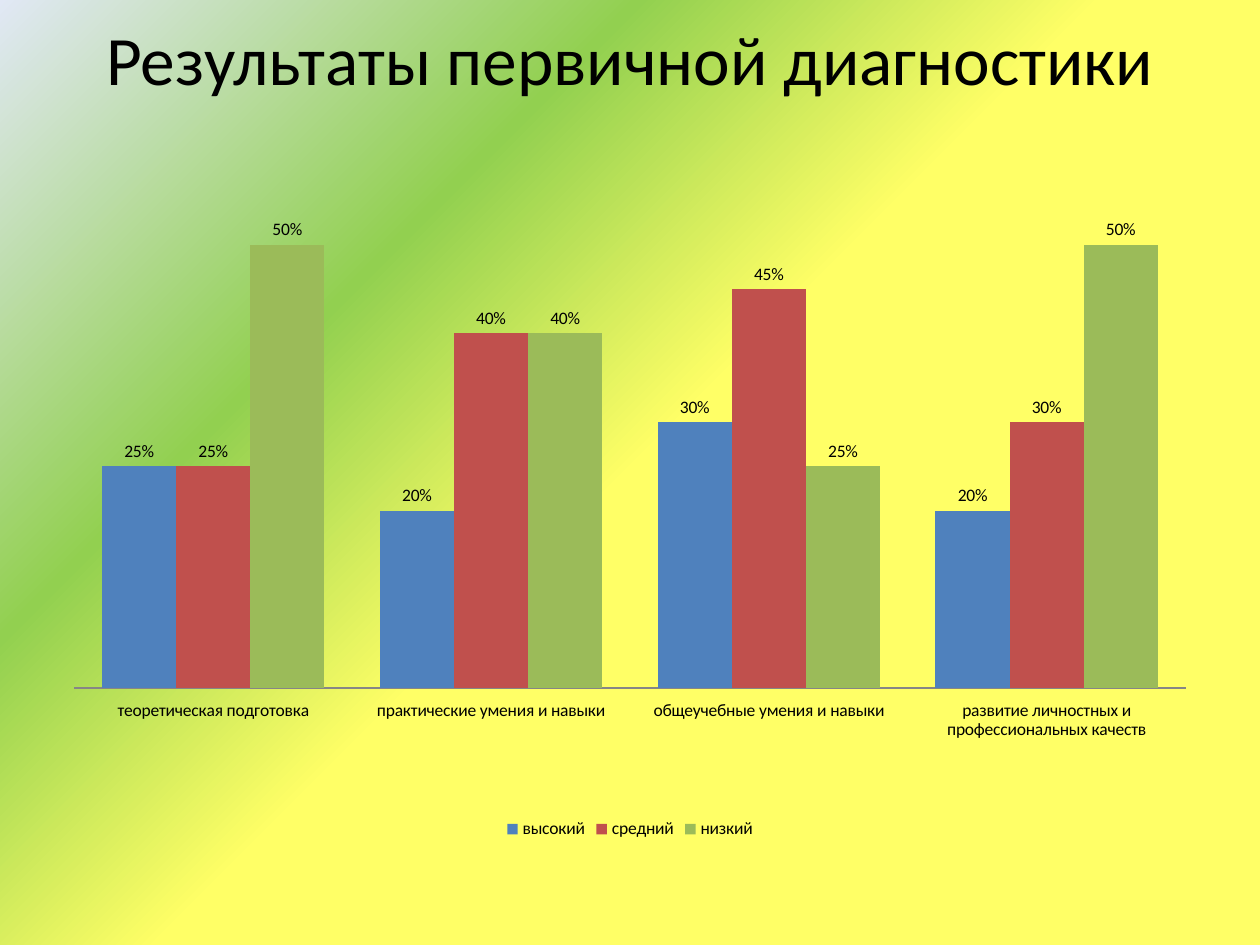
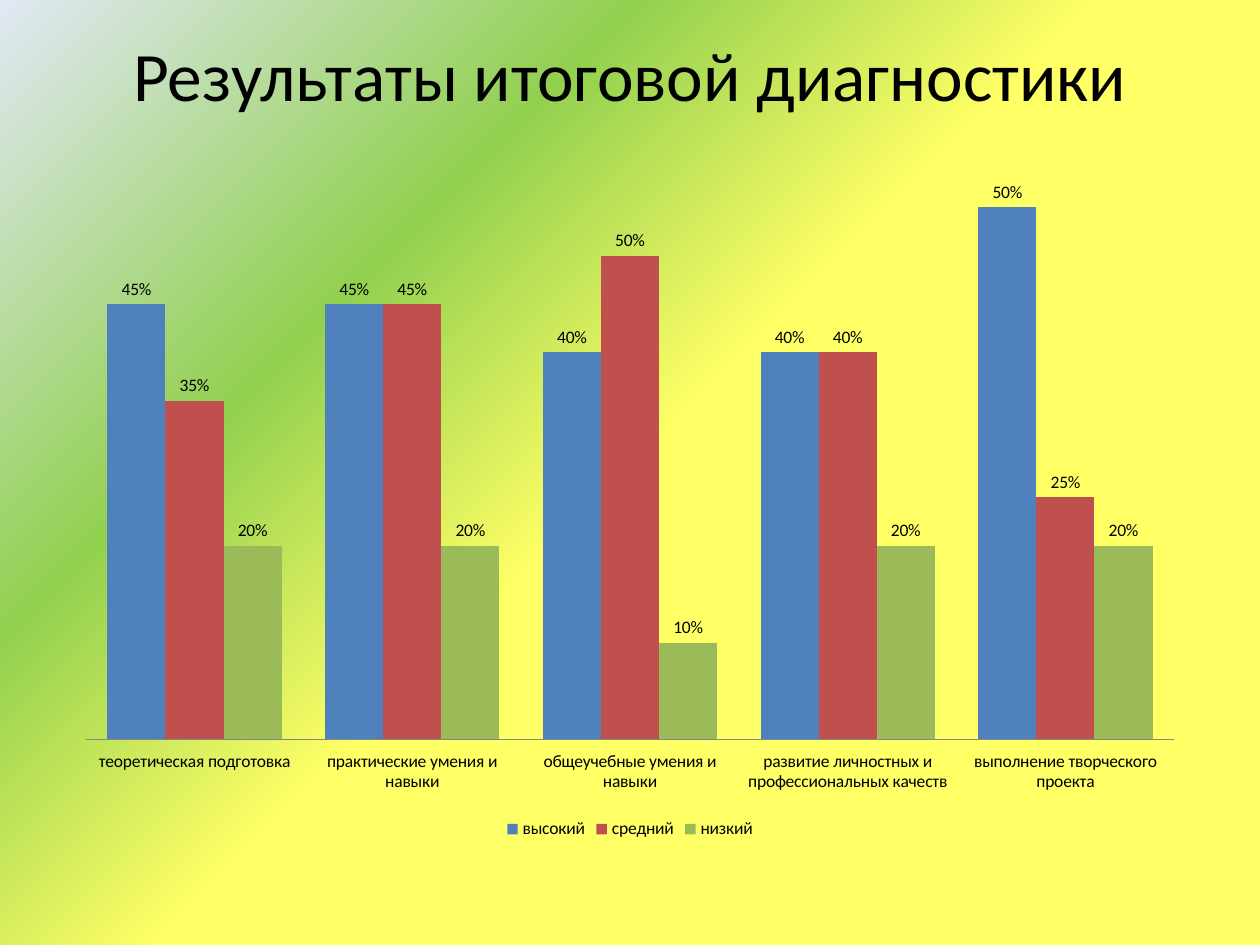
from lxml import etree
from pptx import Presentation
from pptx.chart.data import CategoryChartData
from pptx.dml.color import RGBColor
from pptx.enum.chart import XL_CHART_TYPE, XL_LABEL_POSITION, XL_LEGEND_POSITION, XL_TICK_LABEL_POSITION, XL_TICK_MARK
from pptx.enum.text import MSO_ANCHOR, PP_ALIGN
from pptx.oxml.ns import qn
from pptx.util import Pt

CLUSTERED = XL_CHART_TYPE.COLUMN_CLUSTERED
OUTSIDE_END = XL_LABEL_POSITION.OUTSIDE_END
BOTTOM = XL_LEGEND_POSITION.BOTTOM
LOW = XL_TICK_LABEL_POSITION.LOW
NO_TICK = XL_TICK_MARK.NONE
MIDDLE = MSO_ANCHOR.MIDDLE
CENTER = PP_ALIGN.CENTER

PX = 914400 / 126
SLIDE_BOX = (1260, 945)
FONT = "Calibri"
BLACK = "000000"
AXIS_GRAY = "868686"
GRADIENT_STOPS = ((50, "FFFF66"), (71, "92D050"), (100, "E1E8F5"))
LEVELS = (("высокий", "4F81BD"), ("средний", "C0504D"), ("низкий", "9BBB59"))
SKILLS = (
    "теоретическая подготовка",
    "практические умения и навыки",
    "общеучебные умения и навыки",
    "развитие личностных и профессиональных качеств",
)
TITLE_FORMAT = {"name": FONT, "size": Pt(39.6), "bold": False}
CHART_FORMAT = {"name": FONT, "size": Pt(10), "bold": False}

RESULTS = (
    {
        "title": "Результаты первичной диагностики",
        "title_box": (63, 3, 1134, 110),
        "title_inset": 6,
        "chart_box": (63, 135, 1134, 709),
        "categories": SKILLS,
        "values": ((25, 20, 30, 20), (25, 40, 45, 30), (50, 40, 25, 50)),
        "plot_area": {"x": 0.01, "y": 0.03, "w": 0.98, "h": 0.75},
        "label_overrides": {},
    },
    {
        "title": "Результаты итоговой диагностики",
        "title_box": (63, 38, 1134, 157),
        "title_inset": 91,
        "chart_box": (63, 145, 1134, 699),
        "categories": SKILLS + ("выполнение творческого проекта",),
        "values": ((45, 45, 40, 40, 55), (35, 45, 50, 40, 25), (20, 20, 10, 20, 20)),
        "plot_area": None,
        "label_overrides": {(0, 4): "50%"},
    },
)


def emu(pixels):
    """Turn pixels into EMU."""
    return round(pixels * PX)


def color(hex_string):
    """Turn a hex string into a colour."""
    return RGBColor.from_string(hex_string)


def set_attributes(target, values):
    """Set every attribute named in a dict."""
    for name, value in values.items():
        setattr(target, name, value)


def format_font(font, values):
    """Apply font values and the black text colour."""
    set_attributes(font, values)
    font.color.rgb = color(BLACK)


def paint_background(master):
    """Give the master a gradient centred on the bottom right corner."""
    master.background.fill.gradient()
    gradient = master.element.find(".//" + qn("a:gradFill"))
    for child in list(gradient):
        gradient.remove(child)
    stops = etree.SubElement(gradient, qn("a:gsLst"))
    for position, hex_string in GRADIENT_STOPS:
        stop = etree.SubElement(stops, qn("a:gs"), pos=str(position * 1000))
        etree.SubElement(stop, qn("a:srgbClr"), val=hex_string)
    circle = etree.SubElement(gradient, qn("a:path"), path="circle")
    etree.SubElement(circle, qn("a:fillToRect"), l="100000", t="100000")


def place_title(slide, text, box, bottom_inset):
    """Move the title placeholder into its box and format it."""
    title = slide.shapes.title
    set_attributes(title, dict(zip(("left", "top", "width", "height"), map(emu, box))))
    frame = title.text_frame
    frame.text = text
    set_attributes(frame, {
        "word_wrap": True,
        "vertical_anchor": MIDDLE,
        "margin_top": emu(6),
        "margin_bottom": emu(bottom_inset),
    })
    paragraph = frame.paragraphs[0]
    paragraph.alignment = CENTER
    format_font(paragraph.runs[0].font, TITLE_FORMAT)


def set_plot_area(chart, fractions):
    """Fix the inner plot area as fractions of the chart."""
    plot_area = chart.element.find(".//" + qn("c:plotArea"))
    layout = plot_area.find(qn("c:layout"))
    if layout is None:
        layout = etree.Element(qn("c:layout"))
        plot_area.insert(0, layout)
    manual = etree.SubElement(layout, qn("c:manualLayout"))
    entries = {"layoutTarget": "inner", "xMode": "edge", "yMode": "edge", **fractions}
    for name, value in entries.items():
        etree.SubElement(manual, qn("c:" + name), val=str(value))


def format_axes(chart):
    """Hide the value axis and keep a plain category line."""
    set_attributes(chart.value_axis, {
        "minimum_scale": 0,
        "maximum_scale": 60,
        "has_major_gridlines": False,
        "visible": False,
    })
    axis = chart.category_axis
    set_attributes(axis, {
        "major_tick_mark": NO_TICK,
        "minor_tick_mark": NO_TICK,
        "tick_label_position": LOW,
        "has_major_gridlines": False,
    })
    axis.format.line.color.rgb = color(AXIS_GRAY)
    axis.format.line.width = Pt(0.75)


def format_series(chart, overrides):
    """Colour the columns and label them in percent."""
    plot = chart.plots[0]
    set_attributes(plot, {"gap_width": 75, "overlap": 0, "vary_by_categories": False})
    for series, (_, hex_string) in zip(plot.series, LEVELS):
        series.format.fill.solid()
        series.format.fill.fore_color.rgb = color(hex_string)
        series.invert_if_negative = False
        labels = series.data_labels
        set_attributes(labels, {
            "show_value": True,
            "number_format": '0"%"',
            "number_format_is_linked": False,
            "position": OUTSIDE_END,
        })
        format_font(labels.font, CHART_FORMAT)
    for (series_index, point_index), text in overrides.items():
        label = plot.series[series_index].points[point_index].data_label
        label.text_frame.text = text
        label.position = OUTSIDE_END
        format_font(label.text_frame.paragraphs[0].runs[0].font, CHART_FORMAT)


def place_chart(slide, result):
    """Add the column chart of skill levels in its box."""
    data = CategoryChartData()
    data.categories = result["categories"]
    for (level, _), values in zip(LEVELS, result["values"]):
        data.add_series(level, values)
    box = map(emu, result["chart_box"])
    chart = slide.shapes.add_chart(CLUSTERED, *box, data).chart
    format_font(chart.font, CHART_FORMAT)
    set_attributes(chart, {"has_title": False, "has_legend": True})
    set_attributes(chart.legend, {"position": BOTTOM, "include_in_layout": False})
    format_axes(chart)
    format_series(chart, result["label_overrides"])
    if result["plot_area"]:
        set_plot_area(chart, result["plot_area"])


def add_result_slide(presentation, result):
    """Add one slide with a title and its chart."""
    slide = presentation.slides.add_slide(presentation.slide_layouts[5])
    place_title(slide, result["title"], result["title_box"], result["title_inset"])
    place_chart(slide, result)


def main():
    """Build and save the presentation."""
    presentation = Presentation()
    presentation.slide_width, presentation.slide_height = map(emu, SLIDE_BOX)
    paint_background(presentation.slide_master)
    for result in RESULTS:
        add_result_slide(presentation, result)
    presentation.save("out.pptx")


if __name__ == "__main__":
    main()
